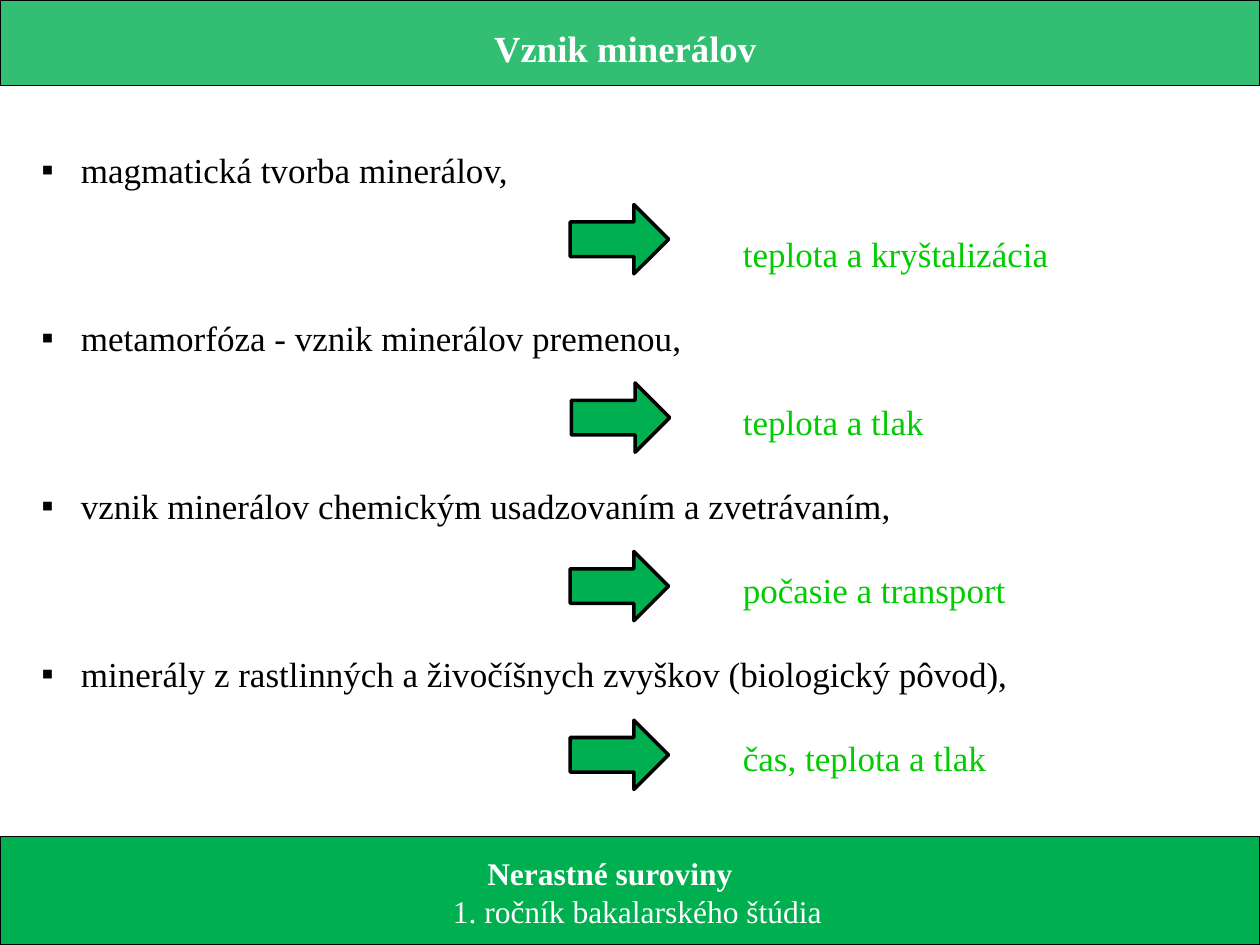
from dataclasses import dataclass

from lxml.etree import SubElement
from pptx import Presentation
from pptx.dml.color import RGBColor
from pptx.enum.shapes import MSO_SHAPE
from pptx.enum.text import MSO_ANCHOR, PP_ALIGN
from pptx.oxml.ns import qn
from pptx.util import Pt

GREEN = RGBColor(0x00, 0xB0, 0x50)
ANSWER_GREEN = RGBColor(0x00, 0xCC, 0x00)
BLACK = RGBColor(0x00, 0x00, 0x00)
WHITE = RGBColor(0xFF, 0xFF, 0xFF)

FONT = "Times New Roman"
SLIDE_WIDTH, SLIDE_HEIGHT = 720, 540
ARROW_WIDTH, ARROW_HEIGHT = 39.6, 56.2
BULLET_INDENT, ANSWER_INDENT = 22.5, 400.8


@dataclass
class Line:
    text: str
    size: float
    color: RGBColor
    bold: bool = False
    indent: float = 0
    bullet: str = ""
    spacing: float | None = None
    alignment: PP_ALIGN = PP_ALIGN.CENTER


@dataclass
class Band:
    top: float
    height: float
    opacity: int
    margins: dict[str, float]
    lines: list[Line]


@dataclass
class Process:
    name: str
    cause: str
    arrow_left: float
    arrow_top: float


BANDS = [
    Band(0, 49, 80, {"margin_top": 8.6, "margin_right": 12.5},
         [Line("Vznik minerálov", 21, WHITE, bold=True)]),
    Band(478.1, 61.9, 100, {"margin_top": 5, "margin_right": 30},
         [Line("Nerastné suroviny", 18, WHITE, bold=True, spacing=21.6),
          Line("1. ročník bakalarského štúdia", 18, WHITE, indent=31.4, spacing=21.6)]),
]

PROCESSES = [
    Process("magmatická tvorba minerálov,", "teplota a kryštalizácia", 334.1, 108.6),
    Process("metamorfóza - vznik minerálov premenou,", "teplota a tlak", 334.8, 210.5),
    Process("vznik minerálov chemickým usadzovaním a zvetrávaním,",
            "počasie a transport", 334.1, 306.8),
    Process("minerály z rastlinných a živočíšnych zvyškov (biologický pôvod),",
            "čas, teplota a tlak", 334.1, 403.2),
]


def apply_format(target, values: dict) -> None:
    for name, value in values.items():
        setattr(target, name, value)


def write_lines(text_frame, lines: list[Line]) -> None:
    for index, line in enumerate(lines):
        paragraph = text_frame.add_paragraph() if index else text_frame.paragraphs[0]
        paragraph.alignment = line.alignment
        if line.spacing:
            paragraph.line_spacing = Pt(line.spacing)
        properties = paragraph._p.get_or_add_pPr()
        properties.set("marL", str(Pt(line.indent)))
        if line.bullet:
            properties.set("indent", str(-Pt(line.indent)))
            SubElement(properties, qn("a:buFont"), typeface=FONT)
            SubElement(properties, qn("a:buChar"), char=line.bullet)
        run = paragraph.add_run()
        run.text = line.text
        apply_format(run.font, {"name": FONT, "size": Pt(line.size), "bold": line.bold})
        run.font.color.rgb = line.color


def add_filled_shape(slide, kind: MSO_SHAPE, left: float, top: float,
                     width: float, height: float, line_width: float):
    shape = slide.shapes.add_shape(kind, Pt(left), Pt(top), Pt(width), Pt(height))
    shape.shadow.inherit = False
    shape.fill.solid()
    shape.fill.fore_color.rgb = GREEN
    shape.line.color.rgb = BLACK
    shape.line.width = Pt(line_width)
    return shape


def add_band(slide, band: Band) -> None:
    shape = add_filled_shape(slide, MSO_SHAPE.RECTANGLE, 0, band.top,
                             SLIDE_WIDTH, band.height, 0.75)
    if band.opacity < 100:
        color = shape._element.spPr.find(qn("a:solidFill")).find(qn("a:srgbClr"))
        SubElement(color, qn("a:alpha"), val=str(band.opacity * 1000))
    margins = {name: Pt(value) for name, value in band.margins.items()}
    apply_format(shape.text_frame, {"vertical_anchor": MSO_ANCHOR.MIDDLE,
                                    "word_wrap": True, **margins})
    write_lines(shape.text_frame, band.lines)


def add_process_list(slide, processes: list[Process]) -> None:
    lines = []
    for process in processes:
        lines += [
            Line(process.name, 20, BLACK, indent=BULLET_INDENT, bullet="▪",
                 spacing=48, alignment=PP_ALIGN.LEFT),
            Line(process.cause, 20, ANSWER_GREEN, indent=ANSWER_INDENT,
                 spacing=48, alignment=PP_ALIGN.LEFT),
        ]
    box = slide.shapes.add_textbox(Pt(16.6), Pt(57.3), Pt(677.5), Pt(392))
    box.text_frame.word_wrap = True
    write_lines(box.text_frame, lines)


def add_arrow(slide, process: Process) -> None:
    arrow = add_filled_shape(slide, MSO_SHAPE.DOWN_ARROW, process.arrow_left,
                             process.arrow_top, ARROW_WIDTH, ARROW_HEIGHT, 2)
    arrow.rotation = 270


def main() -> None:
    presentation = Presentation()
    apply_format(presentation, {"slide_width": Pt(SLIDE_WIDTH),
                                "slide_height": Pt(SLIDE_HEIGHT)})
    slide = presentation.slides.add_slide(presentation.slide_layouts[6])
    add_process_list(slide, PROCESSES)
    for band in BANDS:
        add_band(slide, band)
    for process in PROCESSES:
        add_arrow(slide, process)
    presentation.save("out.pptx")


if __name__ == "__main__":
    main()
